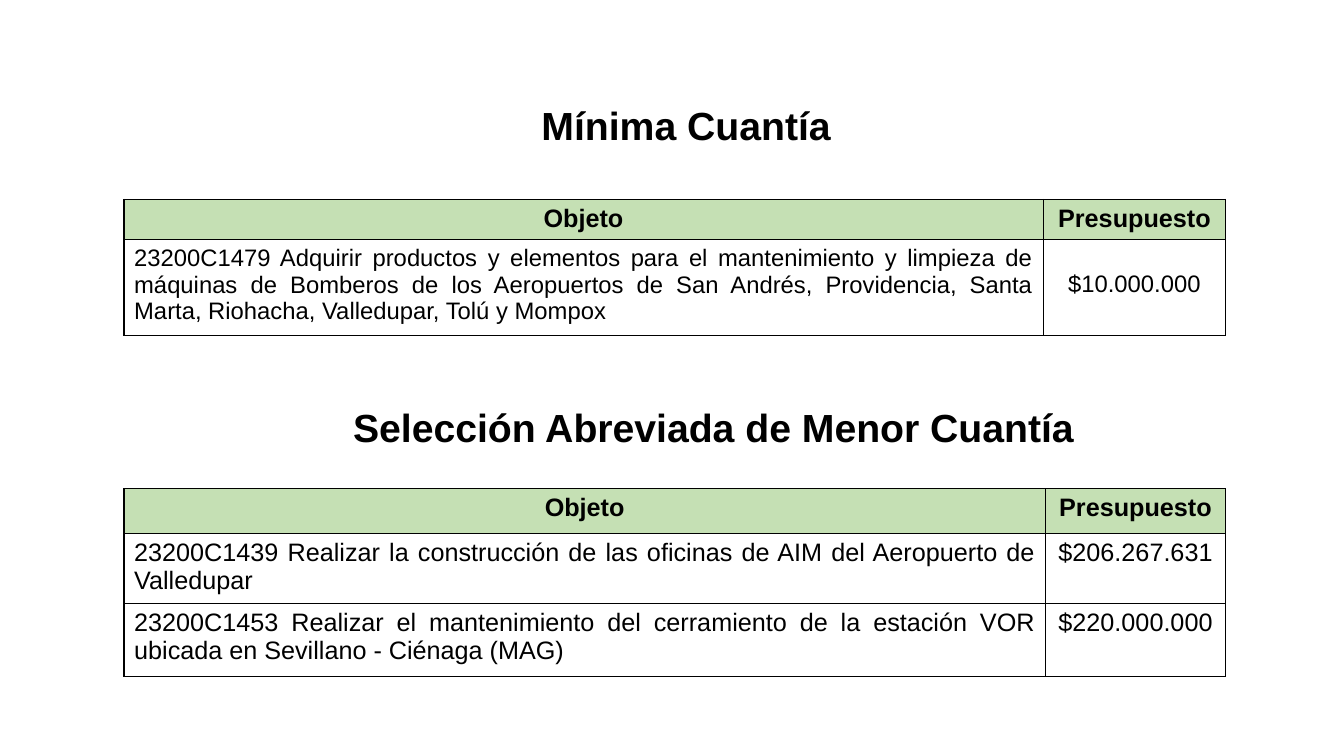
from dataclasses import dataclass

from lxml import etree
from pptx import Presentation
from pptx.dml.color import RGBColor
from pptx.enum.text import MSO_ANCHOR, MSO_AUTO_SIZE, PP_ALIGN
from pptx.oxml import ns
from pptx.util import Pt


@dataclass(frozen=True)
class Theme:
    font: str = "Arial"
    ink: RGBColor = RGBColor(0, 0, 0)
    header: RGBColor = RGBColor(0xC5, 0xE0, 0xB4)
    heading_size: int = 28
    table_size: int = 18
    compact_size: int = 17
    border: int = 1


THEME = Theme()
COLUMNS = ("Objeto", "Presupuesto")
MINIMA = [
    ("23200C1479 Adquirir productos y elementos para el mantenimiento y limpieza "
     "de máquinas de Bomberos de los Aeropuertos de San Andrés, Providencia, "
     "Santa Marta, Riohacha, Valledupar, Tolú y Mompox", "$10.000.000"),
]
ABREVIADA = [
    ("23200C1439 Realizar la construcción de las oficinas de AIM del Aeropuerto "
     "de Valledupar", "$206.267.631"),
    ("23200C1453 Realizar el mantenimiento del cerramiento de la estación VOR "
     "ubicada en Sevillano - Ciénaga (MAG)", "$220.000.000"),
]


def write(tf, content, size, align, bold=False):
    tf.text = content
    p = tf.paragraphs[0]
    p.alignment = align
    p.font.name = THEME.font
    p.font.size = Pt(size)
    p.font.bold = bold
    p.font.color.rgb = THEME.ink


def format_heading(sp, content, left, top, width, height):
    sp.left, sp.top, sp.width, sp.height = map(Pt, (left, top, width, height))
    tf = sp.text_frame
    tf.word_wrap = True
    tf.auto_size = MSO_AUTO_SIZE.NONE
    tf.vertical_anchor = MSO_ANCHOR.TOP
    write(tf, content, THEME.heading_size, PP_ALIGN.CENTER, bold=True)


def add_borders(cell):
    """Draw the four sides; they must come before the cell's fill in the XML."""
    tc_pr = cell._tc.get_or_add_tcPr()
    for i, side in enumerate(("lnL", "lnR", "lnT", "lnB")):
        ln = etree.Element(ns.qn(f"a:{side}"), w=str(Pt(THEME.border)))
        fill = etree.SubElement(ln, ns.qn("a:solidFill"))
        etree.SubElement(fill, ns.qn("a:srgbClr"), val=str(THEME.ink))
        tc_pr.insert(i, ln)


def add_budget_table(s, rows, left, top, widths, heights, size):
    """Place a table of contracts and budgets; a header row precedes the rows."""
    frame = s.shapes.add_table(len(rows) + 1, len(COLUMNS), Pt(left), Pt(top),
                               Pt(sum(widths)), Pt(sum(heights)))
    table = frame.table
    table.horz_banding = False
    table.first_row = False
    for column, width in zip(table.columns, widths):
        column.width = Pt(width)
    for row, height in zip(table.rows, heights):
        row.height = Pt(height)
    for i, values in enumerate([COLUMNS, *rows]):
        for j, value in enumerate(values):
            cell = table.cell(i, j)
            is_header = i == 0
            if is_header:
                cell.fill.solid()
                cell.fill.fore_color.rgb = THEME.header
            else:
                cell.fill.background()
            align = PP_ALIGN.CENTER if is_header or j else PP_ALIGN.JUSTIFY
            write(cell.text_frame, value, THEME.table_size if is_header else size,
                  align, bold=is_header)
            add_borders(cell)
    return table


def add_minima(s, left, top, width):
    format_heading(s.shapes.title, "Mínima Cuantía", left + 16.5, top, 770, 41)
    table = add_budget_table(s, MINIMA, left, top + 73.5, (width - 130.5, 130.5),
                             (28.8, 68.4), THEME.compact_size)
    budget = table.cell(1, 1)
    budget.vertical_anchor = MSO_ANCHOR.MIDDLE
    budget.margin_bottom = Pt(8)


def add_abreviada(s, left, top, width):
    sp = s.shapes.add_textbox(0, 0, 0, 0)
    format_heading(sp, "Selección Abreviada de Menor Cuantía", left + 36, top, 770, 41)
    add_budget_table(s, ABREVIADA, left, top + 64.8, (width - 129, 129),
                     (31.7, 50.4, 51.8), THEME.table_size)


def main():
    prs = Presentation()
    prs.slide_width, prs.slide_height = Pt(960), Pt(540)
    s = prs.slides.add_slide(prs.slide_layouts[5])
    left, width = 88.6, 787
    add_minima(s, left, 69, width)
    add_abreviada(s, left, 284.4, width)
    prs.save("out.pptx")


if __name__ == "__main__":
    main()
